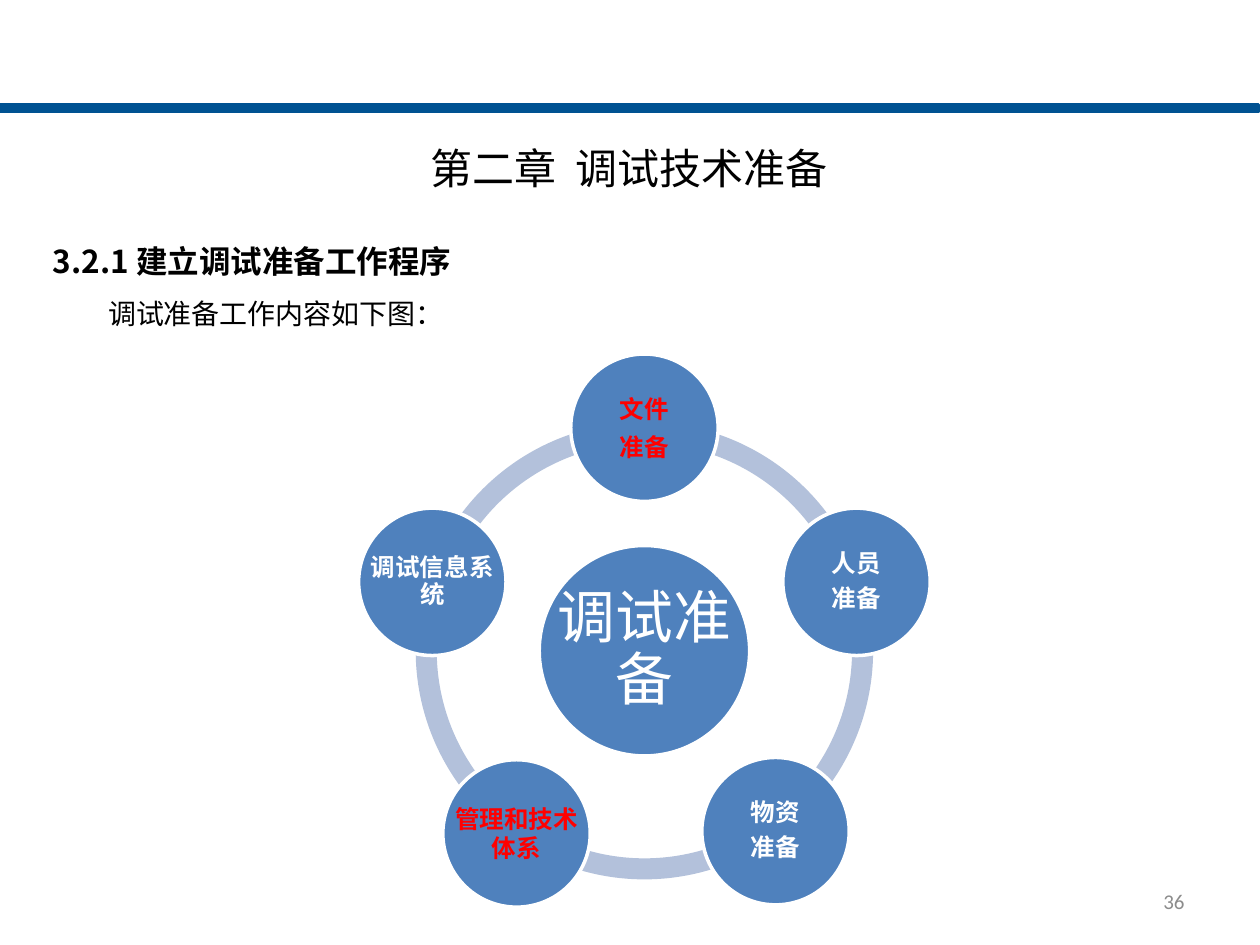
"""Build the slide on commissioning preparation with its ring of tasks."""
from dataclasses import dataclass
from math import cos, radians, sin

from pptx import Presentation
from pptx.dml.color import RGBColor
from pptx.enum.shapes import MSO_SHAPE
from pptx.enum.text import MSO_ANCHOR, MSO_AUTO_SIZE, PP_ALIGN
from pptx.util import Inches, Pt

RECT, OVAL, ARC = MSO_SHAPE.RECTANGLE, MSO_SHAPE.OVAL, MSO_SHAPE.BLOCK_ARC
LEFT, MID, RIGHT = PP_ALIGN.LEFT, PP_ALIGN.CENTER, PP_ALIGN.RIGHT
TOP, CENTER = MSO_ANCHOR.TOP, MSO_ANCHOR.MIDDLE
FIXED = MSO_AUTO_SIZE.NONE
WIDE, HIGH = Inches(10), Inches(7.5)


@dataclass(frozen=True)
class Theme:
    """Hold the fonts, colours and type sizes."""
    latin: str = "Calibri"
    hans: str = "Noto Sans CJK SC"
    navy: str = "005292"
    blue: str = "4F81BD"
    pale: str = "B3C1DB"
    red: str = "FF0000"
    white: str = "FFFFFF"
    black: str = "000000"
    gray: str = "8C8C8C"
    title: int = 24
    head: int = 18
    body: int = 16
    hub: int = 33
    node: int = 14
    page: int = 12


THEME = Theme()


@dataclass(frozen=True)
class Box:
    """Give a frame in percent of the slide's width."""
    left: float
    top: float
    wide: float
    high: float

    def frame(self) -> list[int]:
        """Return the frame in slide units."""
        return [round(WIDE * part / 100)
                for part in (self.left, self.top, self.wide, self.high)]


@dataclass(frozen=True)
class Line:
    """Describe one paragraph and its format."""
    text: str
    size: int
    color: str = THEME.black
    font: str = THEME.hans
    bold: bool = False
    align: PP_ALIGN = LEFT
    pitch: float = 1.0
    after: float = 0
    indent: float = 0


@dataclass(frozen=True)
class Node:
    """Describe one task on the ring."""
    angle: float
    words: tuple[str, ...]
    color: str = THEME.white
    pitch: float = 0.9


HUB_X, HUB_Y, ORBIT = 51.15, 51.65, 17.7
RING, HUB, DISC = 36.3, 16.7, 11.7
BAND = 0.046
TURN = 0.6
NODES = (
    Node(270, ("文件", "准备"), THEME.red, 1.0),
    Node(342, ("人员", "准备")),
    Node(54, ("物资", "准备")),
    Node(125, ("管理和技术体系",), THEME.red, 1.0),
    Node(198, ("调试信息系统",)),
)


def square(x: float, y: float, size: float) -> Box:
    """Return a square centred on a point."""
    return Box(x - size / 2, y - size / 2, size, size)


def paint(shape, fill: str, edge: str | None = None) -> None:
    """Set the fill and the edge of a shape."""
    shape.shadow.inherit = False
    shape.fill.solid()
    shape.fill.fore_color.rgb = RGBColor.from_string(fill)
    if edge:
        shape.line.color.rgb = RGBColor.from_string(edge)
        shape.line.width = Pt(2)
    else:
        shape.line.fill.background()


def write(frame, lines: list[Line], anchor: MSO_ANCHOR, inset: float | None = None) -> None:
    """Fill a text frame with formatted lines."""
    look = {"word_wrap": True, "auto_size": FIXED, "vertical_anchor": anchor}
    if inset is not None:
        sides = ("left", "top", "right", "bottom")
        look |= {f"margin_{side}": Inches(inset) for side in sides}
    for name, value in look.items():
        setattr(frame, name, value)
    for rank, line in enumerate(lines):
        para = frame.add_paragraph() if rank else frame.paragraphs[0]
        if line.indent:
            para._p.get_or_add_pPr().set("indent", str(Inches(line.indent)))
        form = {"alignment": line.align, "line_spacing": line.pitch,
                "space_before": Pt(0), "space_after": Pt(line.after)}
        for name, value in form.items():
            setattr(para, name, value)
        run = para.add_run()
        run.text = line.text
        face = {"name": line.font, "size": Pt(line.size), "bold": line.bold}
        for name, value in face.items():
            setattr(run.font, name, value)
        run.font.color.rgb = RGBColor.from_string(line.color)


def label(shapes, box: Box, lines: list[Line], anchor: MSO_ANCHOR,
          inset: float | None = None) -> None:
    """Add a text box."""
    write(shapes.add_textbox(*box.frame()).text_frame, lines, anchor, inset)


def disc(shapes, box: Box, words: tuple[str, ...], size: int, color: str,
         pitch: float, inset: float, bold: bool) -> None:
    """Draw a round task with its words."""
    paint(shapes.add_shape(OVAL, *box.frame()), THEME.blue, THEME.white)
    lines = [Line(word, size, color, THEME.latin, bold, MID, pitch, size * 0.35)
             for word in words]
    label(shapes, box, lines, CENTER, inset)


def ring(shapes) -> None:
    """Draw the arcs, the hub and the nodes."""
    for node, after in zip(NODES, NODES[1:] + NODES[:1]):
        arc = shapes.add_shape(ARC, *square(HUB_X, HUB_Y, RING).frame())
        for rank, value in enumerate((node.angle * TURN, after.angle * TURN, BAND)):
            arc.adjustments[rank] = value
        paint(arc, THEME.pale)
    disc(shapes, square(HUB_X, HUB_Y, HUB), ("调试准备",), THEME.hub,
         THEME.white, 0.9, 0.05, False)
    for node in NODES:
        turn = radians(node.angle)
        spot = square(HUB_X + ORBIT * cos(turn), HUB_Y + ORBIT * sin(turn), DISC)
        disc(shapes, spot, node.words, THEME.node, node.color, node.pitch, 0.02, True)


def main() -> None:
    """Build and save the slide."""
    deck = Presentation()
    deck.slide_width, deck.slide_height = WIDE, HIGH
    shapes = deck.slides.add_slide(deck.slide_layouts[5]).shapes
    paint(shapes.add_shape(RECT, *Box(0, 8.3, 99.9, 0.5).frame()), THEME.navy, THEME.navy)
    title = shapes.title
    sides = ("left", "top", "width", "height")
    for name, value in zip(sides, Box(4.9, 10.8, 90, 5).frame()):
        setattr(title, name, value)
    write(title.text_frame, [Line("第二章  调试技术准备", THEME.title, align=MID)], CENTER)
    label(shapes, Box(3.2, 17.2, 94.8, 9.6), [
        Line("3.2.1 建立调试准备工作程序", THEME.head, bold=True, pitch=1.5),
        Line("调试准备工作内容如下图：", THEME.body, pitch=1.5, indent=0.44),
    ], TOP)
    label(shapes, Box(71.7, 69.5, 23.3, 4),
          [Line("36", THEME.page, THEME.gray, THEME.latin, align=RIGHT)], CENTER)
    ring(shapes)
    deck.save("out.pptx")


if __name__ == "__main__":
    main()
